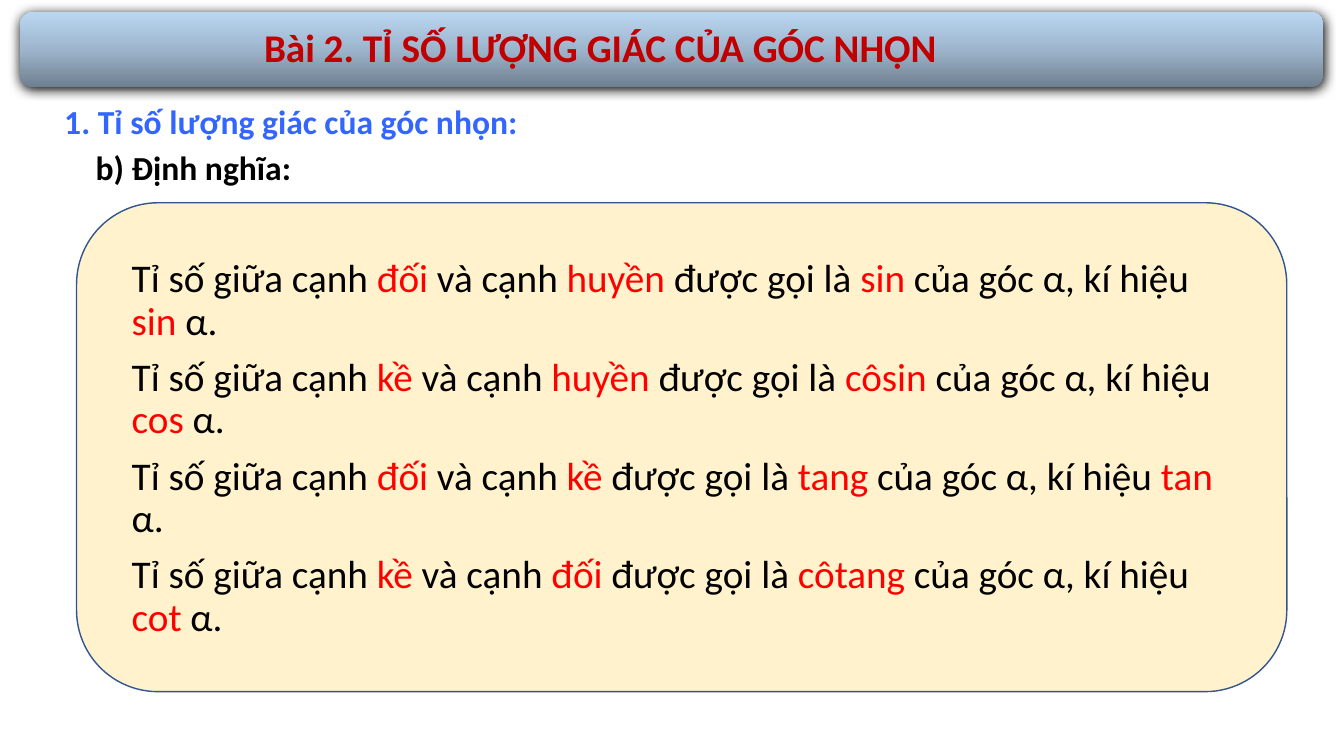
from copy import deepcopy

from pptx import Presentation
from pptx import util as u
from pptx.dml.color import RGBColor
from pptx.enum import shapes, text
from pptx.oxml import parse_xml
from pptx.oxml.ns import nsdecls, qn

TITLE = "Bài 2. TỈ SỐ LƯỢNG GIÁC CỦA GÓC NHỌN"
HEADINGS = [
    # wording, colour, (left, top, width, height) in cm
    ("1. Tỉ số lượng giác của góc nhọn:", "3366FF", (1.37, 2.41, 14.2, 1.27)),
    ("b) Định nghĩa:", "000000", (2.16, 3.58, 6.25, 1.27)),
]
RATIOS = [
    # first side, second side, name, symbol
    ("đối", "huyền", "sin", "sin"),
    ("kề", "huyền", "côsin", "cos"),
    ("đối", "kề", "tang", "tan"),
    ("kề", "đối", "côtang", "cot"),
]
JOINTS = ["Tỉ số giữa cạnh ", " và cạnh ", " được gọi là ", " của góc α, kí hiệu "]
ENDING = " α."
BAR_STOPS = [(0, "6E7F8F"), (0.5, "9DB5CC"), (1, "BAD7F2")]

PANEL_BOX = (1.93, 5.11, 30.5, 12.32)
DEFINITION_BOX = (3.07, 6.4, 28.22, 12.09)
BAR_BOX = (0.51, 0.3, 32.84, 1.9)
TITLE_BOX = (6.4, 0.46, 24.64, 1.45)


def color(value):
    return RGBColor.from_string(value)


def lengths(box):
    return [u.Cm(value) for value in box]


def set_font(target, size, value, bold=False):
    font = target.font
    font.name, font.size, font.bold = "Calibri", u.Pt(size), bold
    font.color.rgb = color(value)


def add_rounded(slide, box):
    shape = slide.shapes.add_shape(
        shapes.MSO_SHAPE.ROUNDED_RECTANGLE, *lengths(box))
    shape.shadow.inherit = False
    return shape


def add_panel(slide):
    panel = add_rounded(slide, PANEL_BOX)
    panel.fill.solid()
    panel.fill.fore_color.rgb = color("FFF2CC")
    panel.line.color.rgb = color("325491")
    panel.line.width = u.Pt(1)


def add_definitions(slide):
    frame = slide.shapes.add_textbox(*lengths(DEFINITION_BOX)).text_frame
    frame.word_wrap = True
    for index, terms in enumerate(RATIOS):
        paragraph = frame.add_paragraph() if index else frame.paragraphs[0]
        paragraph.line_spacing = 0.9
        paragraph.space_before = u.Pt(10 if index else 0)
        set_font(paragraph, 28, "000000")
        for joint, term in zip(JOINTS, terms):
            paragraph.add_run().text = joint
            run = paragraph.add_run()
            run.text = term
            run.font.color.rgb = color("FF0000")
        paragraph.add_run().text = ENDING


def add_heading(slide, wording, value, box):
    frame = slide.shapes.add_textbox(*lengths(box)).text_frame
    frame.word_wrap = True
    frame.auto_size = text.MSO_AUTO_SIZE.SHAPE_TO_FIT_TEXT
    frame.text = wording
    set_font(frame.paragraphs[0], 24, value, bold=True)


def add_title_bar(slide):
    bar = add_rounded(slide, BAR_BOX)
    bar.line.fill.background()
    bar.fill.gradient()
    bar.fill.gradient_angle = 90
    stop_list = bar.element.spPr.find(".//" + qn("a:gsLst"))
    stop_list.append(deepcopy(stop_list[0]))
    for stop, (position, value) in zip(bar.fill.gradient_stops, BAR_STOPS):
        stop.position = position
        stop.color.rgb = color(value)
    bar.element.spPr.find(qn("a:effectLst")).append(parse_xml(
        f'<a:outerShdw {nsdecls("a")} blurRad="{u.Pt(8.5)}" dist="{u.Pt(1)}" '
        'dir="5400000" algn="t" rotWithShape="0">'
        '<a:srgbClr val="000000"/></a:outerShdw>'))


def place_title(slide):
    """Format the title placeholder and bring it in front of the bar."""
    title = slide.shapes.title
    title.left, title.top, title.width, title.height = lengths(TITLE_BOX)
    frame = title.text_frame
    frame.text = TITLE
    frame.word_wrap = True
    frame.auto_size = text.MSO_AUTO_SIZE.SHAPE_TO_FIT_TEXT
    frame.vertical_anchor = text.MSO_ANCHOR.TOP
    paragraph = frame.paragraphs[0]
    paragraph.alignment = text.PP_ALIGN.LEFT
    set_font(paragraph, 28, "C00000", bold=True)
    slide.shapes.element.append(title.element)


def main():
    presentation = Presentation()
    presentation.slide_width, presentation.slide_height = lengths((33.87, 19.05))
    slide = presentation.slides.add_slide(presentation.slide_layouts[5])
    add_panel(slide)
    add_definitions(slide)
    for heading in HEADINGS:
        add_heading(slide, *heading)
    add_title_bar(slide)
    place_title(slide)
    presentation.save("out.pptx")


if __name__ == "__main__":
    main()
